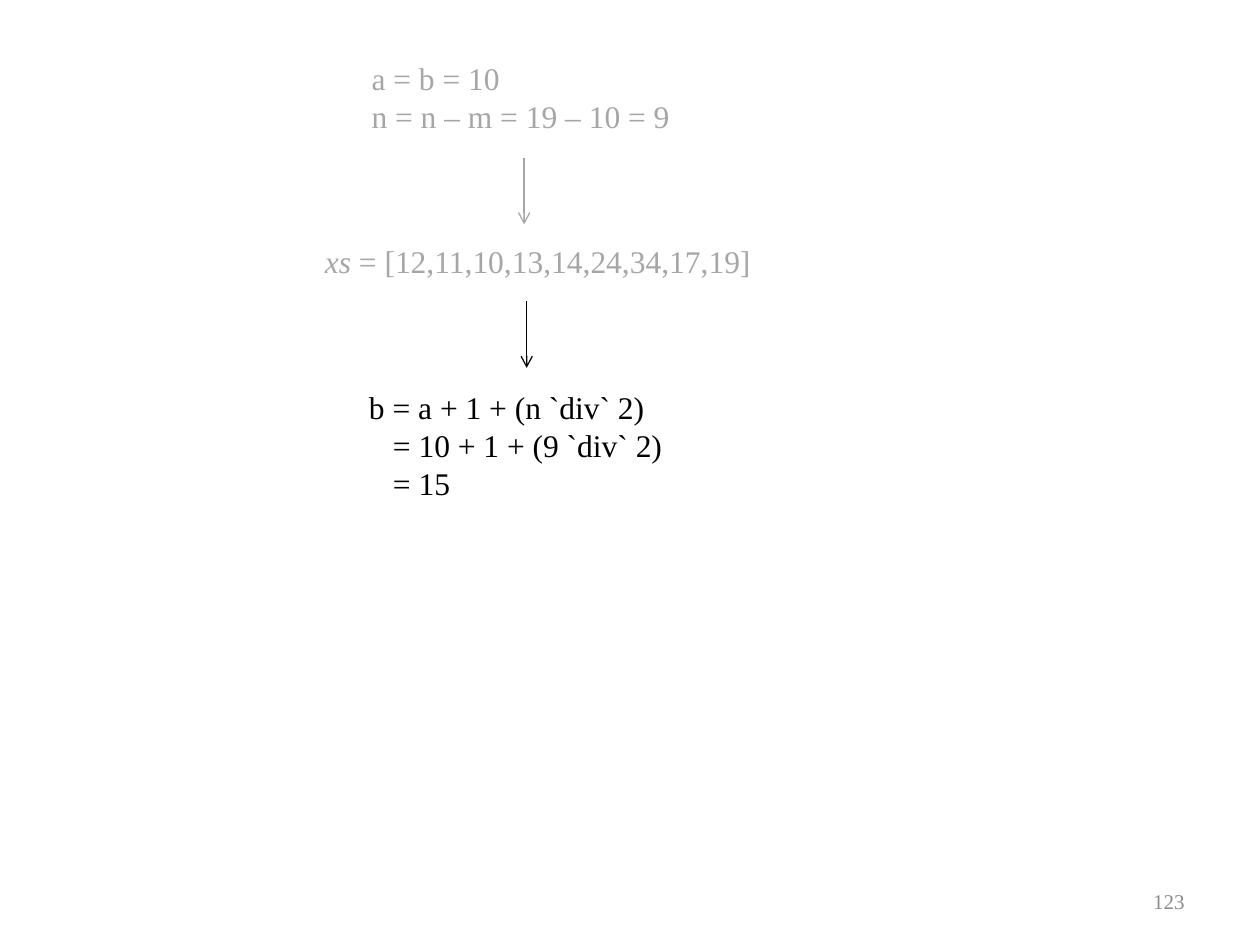
"""Build a slide that follows one step of a search as three linked expressions."""
from dataclasses import dataclass

from pptx import Presentation
from pptx.dml.color import RGBColor
from pptx.enum.shapes import MSO_CONNECTOR
from pptx.enum.text import MSO_ANCHOR, PP_ALIGN
from pptx.oxml.ns import qn
from pptx.slide import Slide
from pptx.util import Inches, Pt
from lxml import etree

STRAIGHT = MSO_CONNECTOR.STRAIGHT
LEFT, RIGHT = PP_ALIGN.LEFT, PP_ALIGN.RIGHT
TOP, MIDDLE = MSO_ANCHOR.TOP, MSO_ANCHOR.MIDDLE
FONT = "Times New Roman"
FADED, ACTIVE, NUMBER = "A6A6A6", "000000", "8C8C8C"


@dataclass
class Span:
    text: str
    italic: bool = False


@dataclass
class Line:
    spans: list[Span]
    indent: float = 0


@dataclass
class Step:
    left: float
    top: float
    width: float
    height: float
    color: str
    lines: list[Line]


@dataclass
class Arrow:
    x: float
    top: float
    color: str
    length: float = 0.53


STEPS = [
    Step(2.85, 0.42, 2.59, 0.71, FADED,
         [Line([Span("a = b = 10")]), Line([Span("n = n – m = 19 – 10 = 9")])]),
    Step(2.48, 1.87, 3.63, 0.4, FADED,
         [Line([Span("xs", italic=True), Span(" = [12,11,10,13,14,24,34,17,19]")])]),
    Step(2.83, 3.03, 2.61, 1.01, ACTIVE,
         [Line([Span("b = a + 1 + (n `div` 2)")]),
          Line([Span("= 10 + 1 + (9 `div` 2)")], indent=0.19),
          Line([Span("= 15")], indent=0.19)]),
]
ARROWS = [Arrow(4.16, 1.25, FADED), Arrow(4.18, 2.39, ACTIVE)]
PAGE_NUMBER = Step(7.17, 6.95, 2.33, 0.4, NUMBER, [Line([Span("123")])])


def rgb(value: str) -> RGBColor:
    return RGBColor.from_string(value)


def add_text(page: Slide, step: Step, *, size: int = 18, align: PP_ALIGN = LEFT,
             anchor: MSO_ANCHOR = TOP, wrap: bool = False) -> None:
    box = page.shapes.add_textbox(Inches(step.left), Inches(step.top),
                                  Inches(step.width), Inches(step.height))
    frame = box.text_frame
    frame.word_wrap = wrap
    frame.vertical_anchor = anchor
    for index, line in enumerate(step.lines):
        para = frame.add_paragraph() if index else frame.paragraphs[0]
        para.alignment = align
        if line.indent:
            para._p.get_or_add_pPr().set("marL", str(Inches(line.indent)))
        for span in line.spans:
            run = para.add_run()
            run.text = span.text
            run.font.name = FONT
            run.font.size = Pt(size)
            run.font.italic = span.italic
            run.font.color.rgb = rgb(step.color)


def add_arrow(page: Slide, arrow: Arrow) -> None:
    connector = page.shapes.add_connector(
        STRAIGHT, Inches(arrow.x), Inches(arrow.top),
        Inches(arrow.x), Inches(arrow.top + arrow.length))
    connector.line.color.rgb = rgb(arrow.color)
    connector.line.width = Pt(0.75)
    etree.SubElement(connector.line._get_or_add_ln(), qn("a:tailEnd"), type="arrow")
    etree.SubElement(connector._element.spPr, qn("a:effectLst"))


def main() -> None:
    deck = Presentation()
    deck.slide_width, deck.slide_height = Inches(10), Inches(7.5)
    page = deck.slides.add_slide(deck.slide_layouts[6])
    for step in STEPS:
        add_text(page, step)
    for arrow in ARROWS:
        add_arrow(page, arrow)
    add_text(page, PAGE_NUMBER, size=12, align=RIGHT, anchor=MIDDLE, wrap=True)
    deck.save("out.pptx")


if __name__ == "__main__":
    main()
